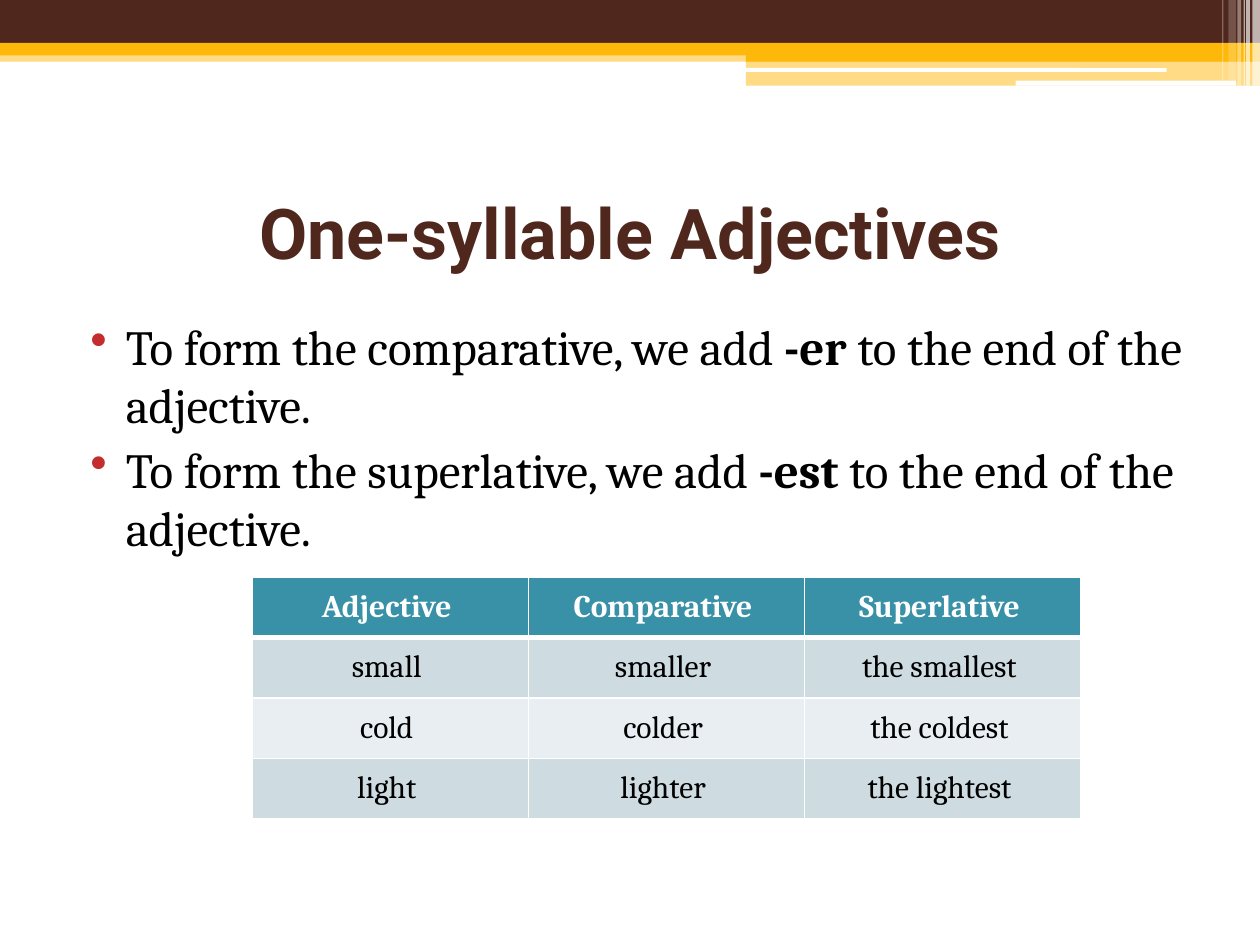
from lxml.etree import SubElement
from pptx import Presentation
from pptx.dml.color import RGBColor
from pptx.enum.shapes import MSO_SHAPE
from pptx.enum.text import MSO_ANCHOR, PP_ALIGN
from pptx.oxml import parse_xml
from pptx.oxml.ns import nsdecls, qn
from pptx.util import Inches, Pt

WIDE, HIGH = Inches(10), Inches(7.5)
COLS, ROWS = 100, 75
BROWN, GOLD, WHITE, BLACK = "4F271C", "FEB80A", "FFFFFF", "000000"
RED, TEAL, DARK, LIGHT = "C32D2E", "3891A7", "CEDCE1", "E8EEF1"

BANDS = [
    (0, 4, 100, 0.9, GOLD, 50),
    (0, 0, 100, 3.4, BROWN, 100),
    (0, 3.4, 100, 1, GOLD, 100),
    (59.2, 3.9, 40.8, 1, GOLD, 100),
    (59.2, 4.8, 40.8, 2, GOLD, 50),
]
PILLS = [(59.1, 5.4, 33.5, 0.3), (80.6, 6.4, 17.5, 0.4)]
STRIPES = [
    (99.4, 0.6, 6.8, 65),
    (98.9, 0.3, 6.8, 65),
    (98.7, 0.1, 6.8, 60),
    (98.2, 0.3, 6.8, 40),
    (97.5, 0.6, 6.4, 20),
    (97, 0.1, 6.4, 30),
]
RULES = [("comparative", "-er"), ("superlative", "-est")]
WORDS = [
    ("Adjective", "Comparative", "Superlative"),
    ("small", "smaller", "the smallest"),
    ("cold", "colder", "the coldest"),
    ("light", "lighter", "the lightest"),
]


def grid(x, y, w, h):
    return (
        round(WIDE * x / COLS),
        round(HIGH * y / ROWS),
        round(WIDE * w / COLS),
        round(HIGH * h / ROWS),
    )


def paint(fill, color, alpha=100):
    fill.solid()
    fill.fore_color.rgb = RGBColor.from_string(color)
    if alpha < 100:
        node = fill._xPr.find(qn("a:solidFill"))[0]
        SubElement(node, qn("a:alpha"), val=str(alpha * 1000))


def block(slide, area, color, alpha=100, kind=MSO_SHAPE.RECTANGLE):
    shape = slide.shapes.add_shape(kind, *grid(*area))
    shape.shadow.inherit = False
    shape.line.fill.background()
    paint(shape.fill, color, alpha)


def write(para, text, size=28, font="Cambria", color=BLACK, bold=False, align=None):
    run = para.add_run()
    run.text = text
    run.font.size = Pt(size)
    run.font.name = font
    run.font.bold = bold
    paint(run.font.fill, color)
    if align is not None:
        para.alignment = align


def frame(slide, area, anchor=MSO_ANCHOR.TOP):
    body = slide.shapes.add_textbox(*grid(*area)).text_frame
    body.word_wrap = True
    body.vertical_anchor = anchor
    return body


def bullet(para):
    para.space_before = Pt(3)
    props = para._p.get_or_add_pPr()
    props.set("marL", str(Inches(0.4)))
    props.set("indent", str(-Inches(0.28)))
    tint = SubElement(props, qn("a:buClr"))
    SubElement(tint, qn("a:srgbClr"), val=RED)
    SubElement(props, qn("a:buChar"), char="•")


def edge(cell, top, base):
    props = cell._tc.get_or_add_tcPr()
    sides = {"L": 1, "R": 1, "T": top, "B": base}
    for spot, (side, width) in enumerate(sides.items()):
        line = parse_xml(
            f'<a:ln{side} {nsdecls("a")} w="{Pt(width)}"><a:solidFill>'
            f'<a:srgbClr val="{WHITE}"/></a:solidFill></a:ln{side}>'
        )
        props.insert(spot, line)


def header(slide):
    for *area, color, alpha in BANDS:
        block(slide, area, color, alpha)
    for area in PILLS:
        block(slide, area, WHITE, kind=MSO_SHAPE.ROUNDED_RECTANGLE)
    for x, w, h, alpha in STRIPES:
        block(slide, (x, 0, w, h), WHITE, alpha)


def title(slide):
    body = frame(slide, (5, 12.5, 90, 11.7), MSO_ANCHOR.MIDDLE)
    write(body.paragraphs[0], "One-syllable Adjectives", size=40, font="Roboto",
          color=BROWN, bold=True, align=PP_ALIGN.CENTER)


def rules(slide):
    body = frame(slide, (5, 24.6, 90, 47.3))
    for spot, (form, end) in enumerate(RULES):
        para = body.add_paragraph() if spot else body.paragraphs[0]
        bullet(para)
        write(para, f"To form the {form}, we add ")
        write(para, end, bold=True)
        write(para, " to the end of the adjective.")


def table(slide):
    area = grid(20, 45.8, 65.8, 19.2)
    sheet = slide.shapes.add_table(len(WORDS), len(WORDS[0]), *area).table
    for row, words in enumerate(WORDS):
        head = row == 0
        shade = TEAL if head else DARK if row % 2 else LIGHT
        for col, word in enumerate(words):
            cell = sheet.cell(row, col)
            cell.vertical_anchor = MSO_ANCHOR.MIDDLE
            paint(cell.fill, shade)
            edge(cell, 3 if row == 1 else 1, 3 if head else 1)
            write(cell.text_frame.paragraphs[0], f"{word} ", size=18, bold=head,
                  color=WHITE if head else BLACK, align=PP_ALIGN.CENTER)


def main():
    deck = Presentation()
    deck.slide_width, deck.slide_height = WIDE, HIGH
    slide = deck.slides.add_slide(deck.slide_layouts[6])
    paint(slide.background.fill, WHITE)
    header(slide)
    title(slide)
    rules(slide)
    table(slide)
    deck.save("out.pptx")


if __name__ == "__main__":
    main()
